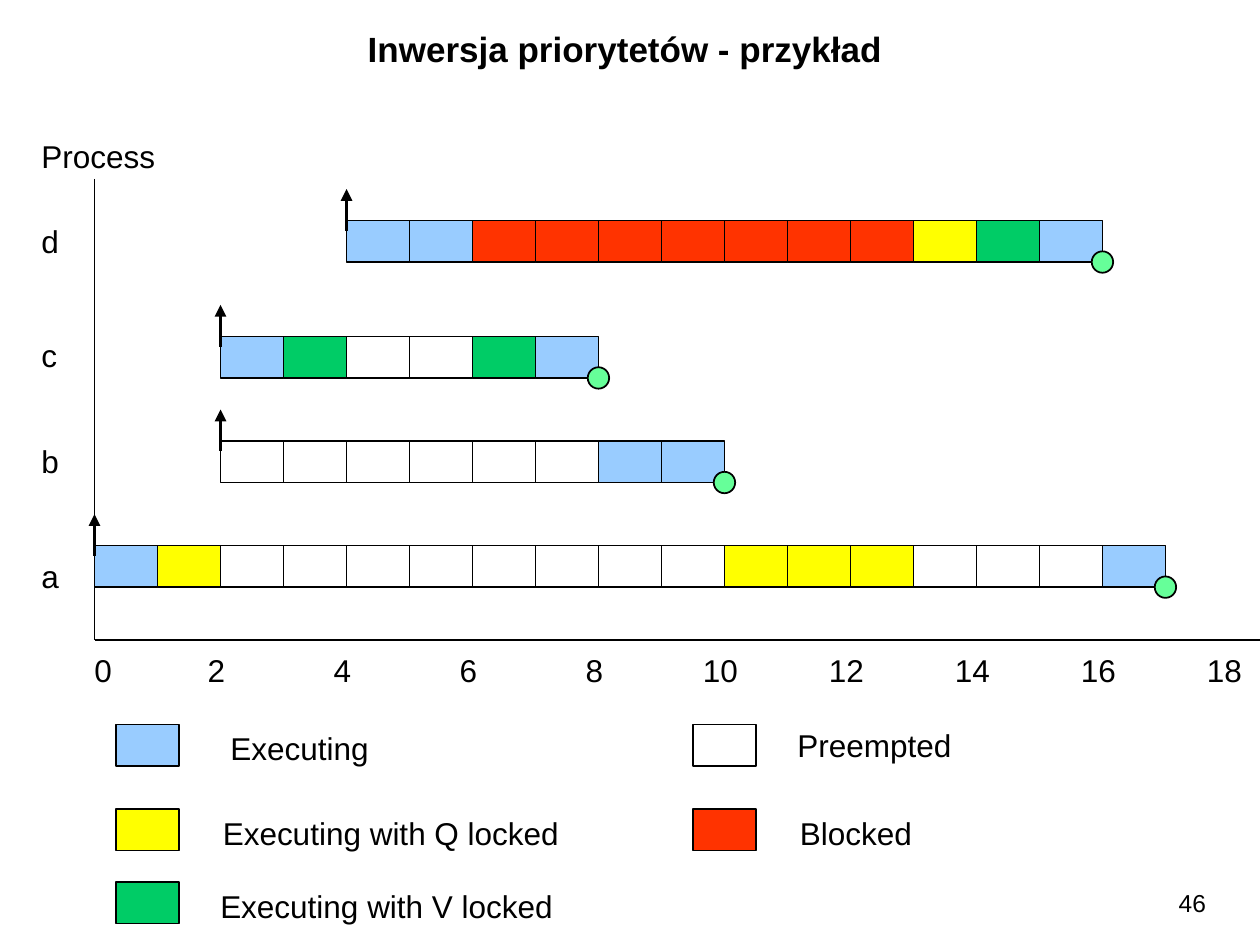
import pptx
import pptx.util
import pptx.dml.color
import pptx.enum.shapes
import pptx.enum.text
import pptx.oxml
import pptx.oxml.ns
import lxml.etree

Inches = pptx.util.Inches
RGBColor = pptx.dml.color.RGBColor
SHAPES = pptx.enum.shapes.MSO_SHAPE
ALIGN = pptx.enum.text.PP_ALIGN

BLACK = RGBColor(0x00, 0x00, 0x00)
BLUE = RGBColor(0x99, 0xCC, 0xFF)
YELLOW = RGBColor(0xFF, 0xFF, 0x00)
GREEN = RGBColor(0x00, 0xCC, 0x66)
RED = RGBColor(0xFF, 0x33, 0x00)
MINT = RGBColor(0x66, 0xFF, 0x99)
STATE_COLORS = {"E": BLUE, "Q": YELLOW, "V": GREEN, "B": RED, "P": None}

ORIGIN = 0.75
UNIT = 0.5
BAR_HEIGHT = 0.33
DOT = 0.17

presentation = pptx.Presentation()
presentation.slide_width = Inches(10)
presentation.slide_height = Inches(7.5)
slide = presentation.slides.add_slide(presentation.slide_layouts[6])


def add_text(text, left, top, width, height=0.4, size=18, align=ALIGN.LEFT, bold=False, wrap=False):
    box = slide.shapes.add_textbox(Inches(left), Inches(top), Inches(width), Inches(height))
    box.text_frame.word_wrap = wrap
    box.text_frame.text = text
    paragraph = box.text_frame.paragraphs[0]
    paragraph.alignment = align
    font = paragraph.runs[0].font
    font.name = "Arial"
    font.size = pptx.util.Pt(size)
    font.bold = bold
    font.color.rgb = BLACK


def add_block(left, top, width, height, color, kind=SHAPES.RECTANGLE):
    shape = slide.shapes.add_shape(kind, Inches(left), Inches(top), Inches(width), Inches(height))
    shape.shadow.inherit = False
    shape.line.color.rgb = BLACK
    shape.line.width = pptx.util.Pt(1)
    if color is None:
        shape.fill.background()
    else:
        shape.fill.solid()
        shape.fill.fore_color.rgb = color


add_text("46", 8.75, 7, 0.92, 0.33, size=14, align=ALIGN.RIGHT, wrap=True)
add_text("Inwersja priorytetów - przykład", 0.25, 0.17, 9.42, 0.43, size=20, align=ALIGN.CENTER, bold=True, wrap=True)
add_text("Process", 0.23, 1.04, 1.1)

processes = [
    ("a", 0, "EQPPPPPPPPQQQPPPE", 4.33, 4.37),
    ("b", 2, "PPPPPPEE", 3.5, 3.46),
    ("c", 2, "EVPPVE", 2.67, 2.62),
    ("d", 4, "EEBBBBBBBQVE", 1.75, 1.71),
]
lines = [
    (ORIGIN, 1.42, ORIGIN, 5.08, 1, False),
    (ORIGIN, 5.08, 10, 5.08, 1, False),
]
for name, start, states, top, label_top in processes:
    add_text(name, 0.23, label_top, 0.34)
    left = ORIGIN + start * UNIT
    for index, state in enumerate(states):
        add_block(left + index * UNIT, top, UNIT, BAR_HEIGHT, STATE_COLORS[state])
    lines.append((left, top - 0.25, left, top + 0.08, 2.25, True))

for x1, y1, x2, y2, width, arrow in lines:
    connector = slide.shapes.add_connector(
        pptx.enum.shapes.MSO_CONNECTOR.STRAIGHT, Inches(x1), Inches(y1), Inches(x2), Inches(y2))
    connector.line.color.rgb = BLACK
    connector.line.width = pptx.util.Pt(width)
    if arrow:
        head = lxml.etree.SubElement(connector.line._get_or_add_ln(), pptx.oxml.ns.qn("a:headEnd"))
        head.set("type", "triangle")
    lxml.etree.SubElement(connector._element.spPr, pptx.oxml.ns.qn("a:effectLst"))

for name, start, states, top, label_top in processes:
    finish = ORIGIN + (start + len(states)) * UNIT
    add_block(finish - DOT / 2, top + BAR_HEIGHT - DOT / 2, DOT, DOT, MINT, SHAPES.OVAL)

add_text("0", 0.65, 5.12, 0.34)
for tick in range(2, 19, 2):
    label_width = 0.34 if tick < 10 else 0.48
    add_text(str(tick), 0.72 + tick * UNIT - label_width / 2, 5.12, label_width)

legend = [
    ("Executing", "E", 0.92, 5.75, 1.73, 5.74, 1.3),
    ("Executing with Q locked", "Q", 0.92, 6.42, 1.67, 6.41, 2.87),
    ("Executing with V locked", "V", 0.92, 7, 1.65, 6.99, 2.84),
    ("Preempted", "P", 5.5, 5.75, 6.23, 5.71, 1.42),
    ("Blocked", "B", 5.5, 6.42, 6.25, 6.41, 1.09),
]
for text, state, left, top, text_left, text_top, text_width in legend:
    add_block(left, top, UNIT, BAR_HEIGHT, STATE_COLORS[state])
    add_text(text, text_left, text_top, text_width)

presentation.save("out.pptx")
